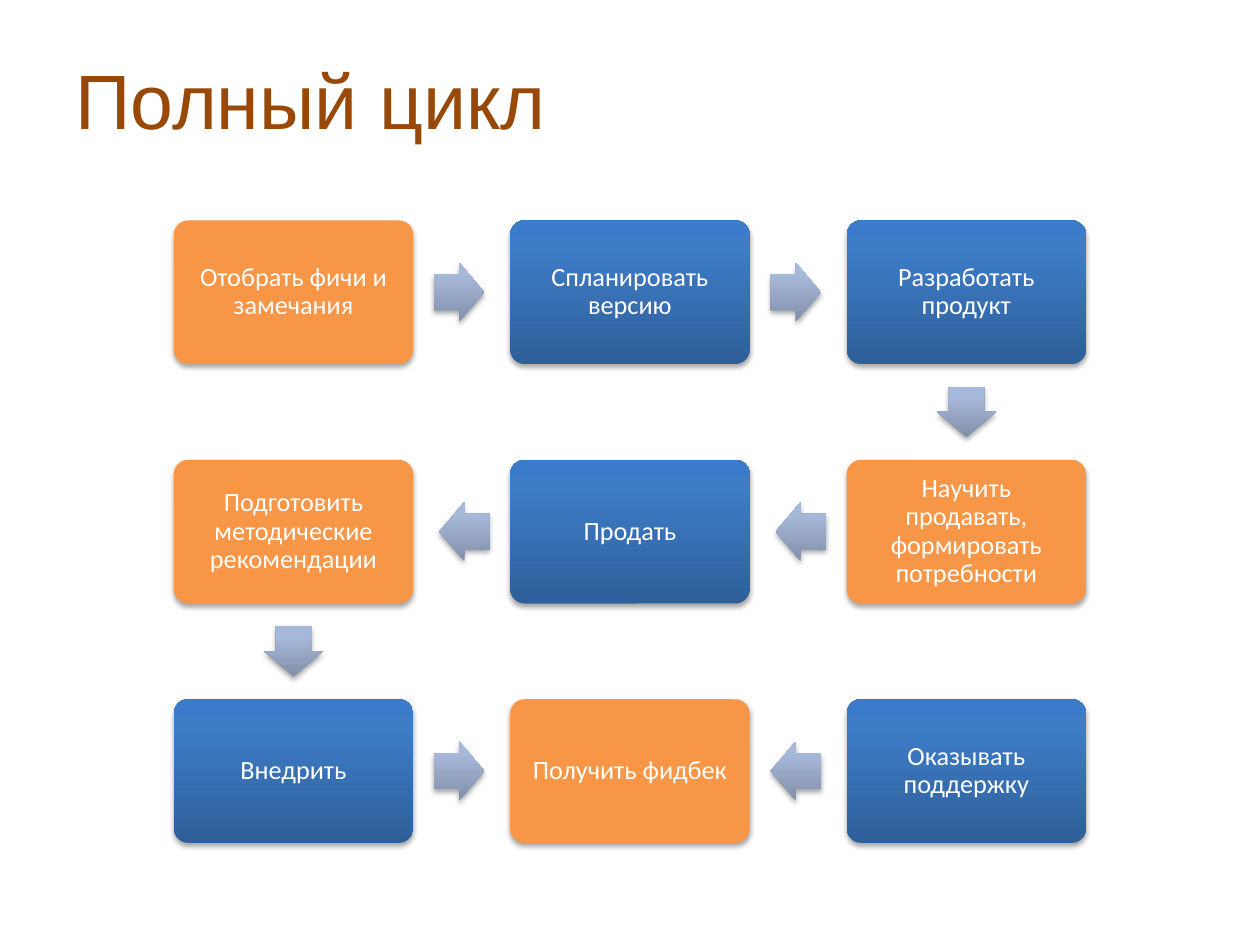
from copy import deepcopy

from lxml import etree
from pptx import Presentation
from pptx.dml.color import RGBColor
from pptx.enum.shapes import MSO_SHAPE
from pptx.enum.text import MSO_ANCHOR, PP_ALIGN
from pptx.oxml.ns import qn
from pptx.util import Inches, Pt

ROUNDED, ARROW = MSO_SHAPE.ROUNDED_RECTANGLE, MSO_SHAPE.RIGHT_ARROW
TOP, MIDDLE = MSO_ANCHOR.TOP, MSO_ANCHOR.MIDDLE
LEFT, CENTER = PP_ALIGN.LEFT, PP_ALIGN.CENTER

# Content: the grid of steps, row by row
TITLE = "Полный цикл"
ORANGE = "F79646"
BLUE = [(0, "2F5F99"), (0.8, "3D7CC7"), (1, "3A7CCB")]
GREY = [(0, "818FA8"), (0.8, "A7B9DA"), (1, "A7BADC")]
STEPS = [
    [("Отобрать фичи и замечания", ORANGE), ("Спланировать версию", BLUE),
     ("Разработать продукт", BLUE)],
    [("Подготовить методические рекомендации", ORANGE), ("Продать", BLUE),
     ("Научить продавать, формировать потребности", ORANGE)],
    [("Внедрить", BLUE), ("Получить фидбек", ORANGE),
     ("Оказывать поддержку", BLUE)],
]
# Arrows: row and column of the cell on the left or above, rotation
ACROSS = [(0, 0, 0), (0, 1, 0), (1, 1, 180), (1, 0, 180), (2, 0, 0), (2, 1, 180)]
DOWN = [(0, 2, 90), (1, 0, 90)]

# Layout in inches
GRID_LEFT, GRID_TOP = 1.38, 1.75
BOX_WIDTH, BOX_HEIGHT = 1.9, 1.14
STEP_X, STEP_Y = 2.67, 1.9
ARROW_WIDTH, ARROW_HEIGHT = 0.4, 0.47
ROW_SHIFTS = [-0.02, 0.02, -0.02]

TITLE_FORMAT = {"size": Pt(44), "name": "Arial"}
STEP_FORMAT = {"size": Pt(15), "name": "Calibri"}


def color(value):
    return RGBColor.from_string(value)


def paint(shape, fill):
    """Fill with one colour, or with stops running from bottom to top."""
    if isinstance(fill, str):
        shape.fill.solid()
        shape.fill.fore_color.rgb = color(fill)
        return
    shape.fill.gradient()
    shape.fill.gradient_angle = 90
    gradient = shape._element.spPr.find(qn("a:gradFill"))
    gradient.set("rotWithShape", "0")
    stop_list = gradient.find(qn("a:gsLst"))
    stop_list.append(deepcopy(stop_list[0]))
    for stop, (position, value) in zip(shape.fill.gradient_stops, fill):
        stop.position = position
        stop.color.rgb = color(value)


def add_shadow(shape):
    shape.shadow.inherit = False
    effects = shape._element.spPr.find(qn("a:effectLst"))
    shadow = etree.SubElement(
        effects, qn("a:outerShdw"), blurRad=str(Pt(3.1)), dist=str(Pt(1.8)),
        dir="5400000", rotWithShape="0")
    black = etree.SubElement(shadow, qn("a:srgbClr"), val="000000")
    etree.SubElement(black, qn("a:alpha"), val="35000")


def add_part(slide, kind, center, size, fill, adjustments):
    (x, y), (width, height) = center, size
    shape = slide.shapes.add_shape(
        kind, Inches(x - width / 2), Inches(y - height / 2),
        Inches(width), Inches(height))
    for index, value in enumerate(adjustments):
        shape.adjustments[index] = value
    paint(shape, fill)
    shape.line.fill.background()
    add_shadow(shape)
    return shape


def write(shape, text, text_color, font_format, alignment, anchor):
    frame = shape.text_frame
    frame.word_wrap = True
    frame.vertical_anchor = anchor
    paragraph = frame.paragraphs[0]
    paragraph.alignment = alignment
    run = paragraph.add_run()
    run.text = text
    run.font.color.rgb = color(text_color)
    for name, value in font_format.items():
        setattr(run.font, name, value)
    return frame


def cell_center(row, column):
    return (GRID_LEFT + BOX_WIDTH / 2 + column * STEP_X,
            GRID_TOP + BOX_HEIGHT / 2 + row * STEP_Y)


def add_arrow(slide, center, rotation):
    arrow = add_part(slide, ARROW, center, (ARROW_WIDTH, ARROW_HEIGHT), GREY, (0.6, 0.5))
    arrow.rotation = rotation


def main():
    presentation = Presentation()
    presentation.slide_width, presentation.slide_height = Inches(10), Inches(7.5)
    slide = presentation.slides.add_slide(presentation.slide_layouts[5])

    # Title
    title = slide.shapes.title
    title.left, title.top = Inches(0.5), Inches(0.3)
    title.width, title.height = Inches(9), Inches(1.25)
    frame = write(title, TITLE, "984807", TITLE_FORMAT, LEFT, TOP)
    frame.margin_top = Inches(0.12)

    # Step boxes
    for row, steps in enumerate(STEPS):
        for column, (text, fill) in enumerate(steps):
            box = add_part(slide, ROUNDED, cell_center(row, column),
                           (BOX_WIDTH, BOX_HEIGHT), fill, (0.1,))
            frame = write(box, text, "FFFFFF", STEP_FORMAT, CENTER, MIDDLE)
            frame.paragraphs[0].line_spacing = 0.9
            for side in ("left", "top", "right", "bottom"):
                setattr(frame, f"margin_{side}", Inches(0.06))

    # Arrows in the gaps between the boxes
    for row, column, rotation in ACROSS:
        x, y = cell_center(row, column)
        add_arrow(slide, (x + STEP_X / 2 + ROW_SHIFTS[row], y), rotation)
    for row, column, rotation in DOWN:
        x, y = cell_center(row, column)
        add_arrow(slide, (x, y + STEP_Y / 2), rotation)

    presentation.save("out.pptx")


if __name__ == "__main__":
    main()
